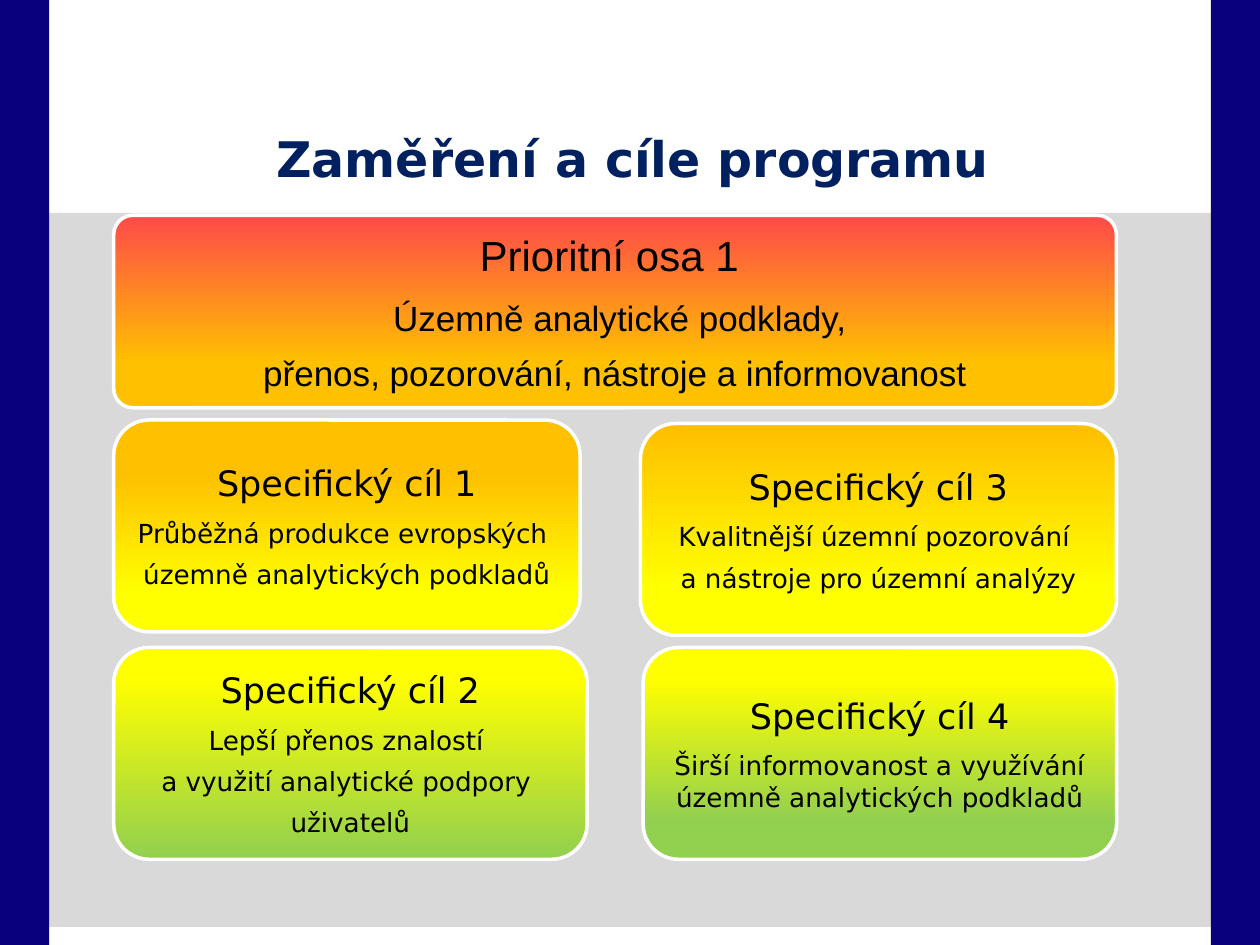
from dataclasses import dataclass

from pptx import Presentation
from pptx.dml.color import RGBColor
from pptx.enum.shapes import MSO_SHAPE
from pptx.enum.text import MSO_ANCHOR, PP_ALIGN
from pptx.util import Pt

COLOURS = {
    "navy": "08007D",
    "title": "002060",
    "grey": "D9D9D9",
    "white": "FFFFFF",
    "black": "000000",
    "red": "FF4A4A",
    "orange": "FFC000",
    "yellow": "FFFF00",
    "green": "92D050",
}
WIDTH, HEIGHT = 720, 540
SIDE_WIDTH = 28.1
LEFT, RIGHT = 65, 638
GOAL_HEIGHT = 121
LOWER_TOP = 370
SPACE_RATIO = 0.38


@dataclass(frozen=True)
class Area:
    left: float
    top: float
    width: float
    height: float

    def points(self) -> tuple:
        return Pt(self.left), Pt(self.top), Pt(self.width), Pt(self.height)


@dataclass(frozen=True)
class Card:
    area: Area
    gradient: tuple
    lines: tuple
    heading_size: float = 20
    body_size: float = 15
    font: str = "DejaVu Sans"
    corner: float = 0.167
    inset: float = 6.3


def colour(name: str) -> RGBColor:
    return RGBColor.from_string(COLOURS[name])


def set_values(target, values: dict) -> None:
    for name, value in values.items():
        setattr(target, name, value)


def format_frame(frame, anchor, inset: float) -> None:
    margins = {f"margin_{side}": Pt(inset) for side in ("left", "top", "right", "bottom")}
    set_values(frame, {"word_wrap": True, "vertical_anchor": anchor, **margins})


def add_line(para, text: str, font: str, size: float, ink: str, bold: bool = False) -> None:
    para.alignment = PP_ALIGN.CENTER
    span = para.add_run()
    span.text = text
    set_values(span.font, {"name": font, "size": Pt(size), "bold": bold})
    span.font.color.rgb = colour(ink)


def add_band(page, area: Area, fill: str) -> None:
    band = page.shapes.add_shape(MSO_SHAPE.RECTANGLE, *area.points())
    band.shadow.inherit = False
    band.fill.solid()
    band.fill.fore_color.rgb = colour(fill)
    band.line.fill.background()


def add_title(page, text: str) -> None:
    box = page.shapes.add_textbox(*Area(57, 73.5, 609, 46).points())
    format_frame(box.text_frame, MSO_ANCHOR.TOP, 0)
    add_line(box.text_frame.paragraphs[0], text, "DejaVu Sans", 28, "title", True)


def add_card(page, card: Card) -> None:
    box = page.shapes.add_shape(MSO_SHAPE.ROUNDED_RECTANGLE, *card.area.points())
    box.shadow.inherit = False
    box.adjustments[0] = card.corner
    box.fill.gradient()
    box.fill.gradient_angle = 270
    for stop, (position, name) in zip(box.fill.gradient_stops, card.gradient):
        stop.position = position
        stop.color.rgb = colour(name)
    box.line.color.rgb = colour("white")
    box.line.width = Pt(2)
    frame = box.text_frame
    format_frame(frame, MSO_ANCHOR.MIDDLE, card.inset)
    for index, text in enumerate(card.lines):
        para = frame.add_paragraph() if index else frame.paragraphs[0]
        size = card.body_size if index else card.heading_size
        add_line(para, text, card.font, size, "black")
        para.space_after = Pt(round(size * SPACE_RATIO, 1))


CARDS = (
    Card(
        Area(LEFT, 123, RIGHT - LEFT, 110),
        ((0, "red"), (0.77, "orange")),
        (
            "Prioritní osa 1 ",
            " Územně analytické podklady,",
            "přenos, pozorování, nástroje a informovanost",
        ),
        heading_size=24,
        body_size=20,
        font="Arial",
        corner=0.1,
        inset=7.5,
    ),
    Card(
        Area(LEFT, 240, 266.5, GOAL_HEIGHT),
        ((0.25, "orange"), (0.82, "yellow")),
        ("Specifický cíl 1", "Průběžná produkce evropských ", "územně analytických podkladů"),
    ),
    Card(
        Area(LEFT, LOWER_TOP, 270.5, GOAL_HEIGHT),
        ((0.15, "yellow"), (1, "green")),
        ("Specifický cíl 2", "Lepší přenos znalostí ", "a využití analytické podpory ", "uživatelů"),
    ),
    Card(
        Area(366, 242, RIGHT - 366, GOAL_HEIGHT),
        ((0.02, "orange"), (0.78, "yellow")),
        ("Specifický cíl 3", "Kvalitnější územní pozorování ", "a nástroje pro územní analýzy"),
    ),
    Card(
        Area(367.5, LOWER_TOP, RIGHT - 367.5, GOAL_HEIGHT),
        ((0.15, "yellow"), (0.82, "green")),
        ("Specifický cíl 4", "Širší informovanost a využívání územně analytických podkladů"),
    ),
)


def main() -> None:
    deck = Presentation()
    set_values(deck, {"slide_width": Pt(WIDTH), "slide_height": Pt(HEIGHT)})
    page = deck.slides.add_slide(deck.slide_layouts[6])
    add_band(page, Area(0, 121.7, WIDTH, 408), "grey")
    for left in (WIDTH - SIDE_WIDTH, 0):
        add_band(page, Area(left, 0, SIDE_WIDTH, HEIGHT), "navy")
    add_title(page, "Zaměření a cíle programu")
    for card in CARDS:
        add_card(page, card)
    deck.save("out.pptx")


if __name__ == "__main__":
    main()
